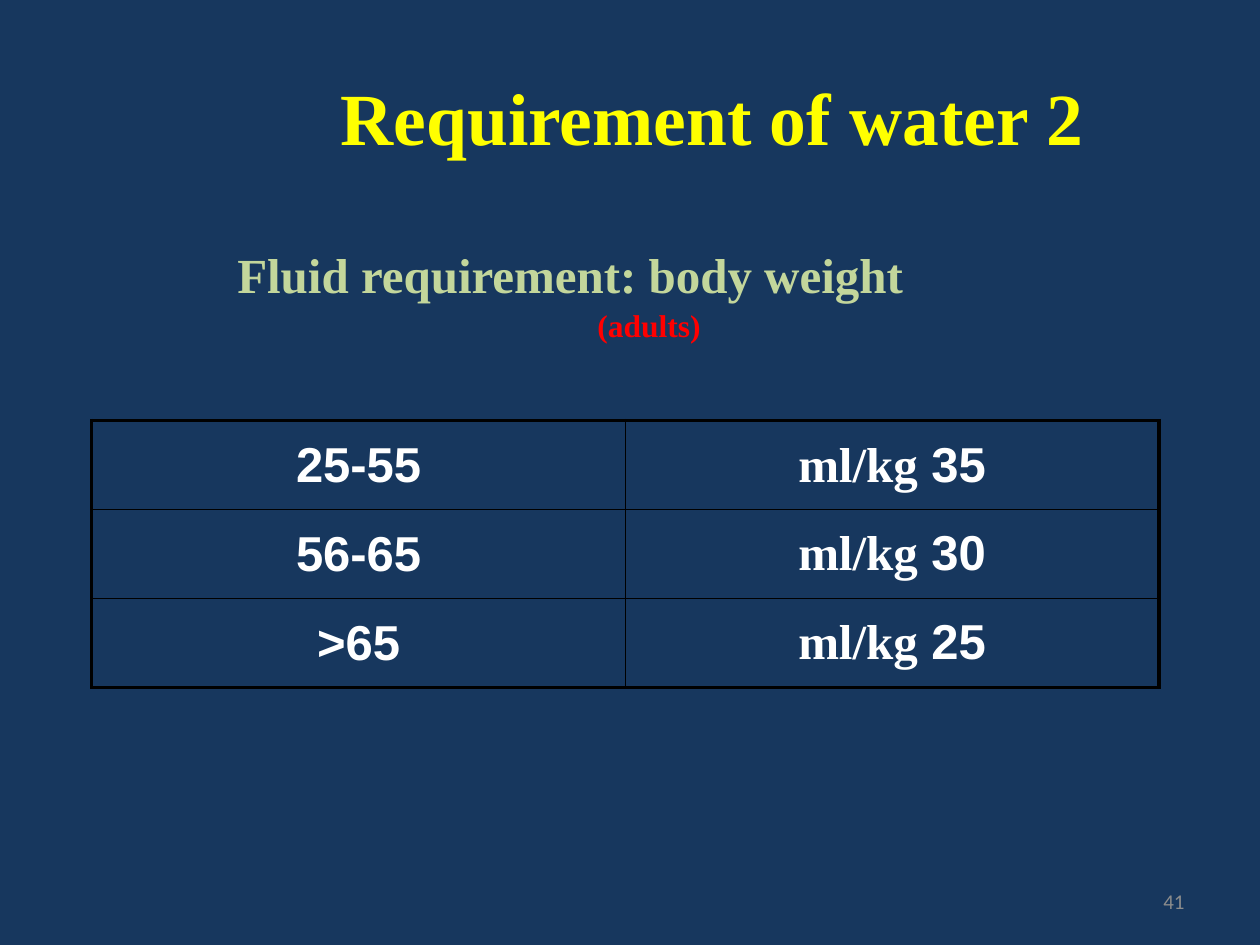
from dataclasses import dataclass

from lxml import etree
from pptx import Presentation
from pptx import util as u
from pptx.dml.color import RGBColor
from pptx.enum import text
from pptx.oxml import ns

COLORS = {
    "navy": "17375E", "yellow": "FFFF00", "sage": "C3D69B", "red": "FF0000",
    "white": "FFFFFF", "black": "000000", "grey": "8C8C8C",
}
SERIF = "Times New Roman"
OUTER, INNER = u.Pt(2.25), u.Pt(1)


@dataclass
class Style:
    size: float
    color: str
    font: str = SERIF
    bold: bool = True


@dataclass
class Place:
    left: float
    top: float
    width: float
    height: float

    def lengths(self) -> list:
        return [u.Cm(n) for n in (self.left, self.top, self.width, self.height)]


@dataclass
class Need:
    age: str
    fluid: str


TITLE = Place(4.57, 0.76, 19.56, 3.18)
BODY = Place(2.29, 4.93, 21.59, 2.9)
TABLE = Place(1.85, 8.48, 21.51, 5.38)
NUMBER = Place(18.21, 17.65, 5.92, 1.02)
CELL = Style(28, "white")
NEEDS = [Need("25-55", "35 ml/kg"), Need("56-65", "30 ml/kg"), Need("65<", "25 ml/kg")]


def rgb(name: str) -> RGBColor:
    return RGBColor.from_string(COLORS[name])


def format_runs(para, style: Style, align) -> None:
    para.alignment = align
    for span in para.runs:
        span.font.name = style.font
        span.font.size = u.Pt(style.size)
        span.font.bold = style.bold
        span.font.color.rgb = rgb(style.color)


def move(box, place: Place) -> None:
    box.left, box.top, box.width, box.height = place.lengths()


def remove_bullet(para, indent: float) -> None:
    props = para._p.get_or_add_pPr()
    props.set("marL", str(u.Cm(indent)))
    props.set("indent", "0")
    etree.SubElement(props, ns.qn("a:buNone"))


def set_right_to_left(para) -> None:
    """Order the paragraph right to left, with a complex-script font."""
    para._p.get_or_add_pPr().set("rtl", "1")
    for span in para.runs:
        script = etree.SubElement(span._r.get_or_add_rPr(), ns.qn("a:cs"))
        script.set("typeface", "Arial")


def add_border(cell, side: str, width: int) -> None:
    line = etree.SubElement(cell._tc.get_or_add_tcPr(), ns.qn(f"a:ln{side}"), w=str(width))
    fill = etree.SubElement(line, ns.qn("a:solidFill"))
    etree.SubElement(fill, ns.qn("a:srgbClr"), val=COLORS["black"])


def add_title(page) -> None:
    box = page.shapes.title
    move(box, TITLE)
    box.text_frame.text = "Requirement of water 2"
    box.text_frame.vertical_anchor = text.MSO_ANCHOR.MIDDLE
    format_runs(box.text_frame.paragraphs[0], Style(42, "yellow"), text.PP_ALIGN.CENTER)


def add_body(page) -> None:
    box = page.placeholders[1]
    move(box, BODY)
    frame = box.text_frame
    frame.text = "Fluid requirement: body weight\n(adults)"
    frame.auto_size = text.MSO_AUTO_SIZE.NONE
    heading, group = frame.paragraphs
    remove_bullet(heading, 2.24)
    remove_bullet(group, 0)
    format_runs(heading, Style(28, "sage"), text.PP_ALIGN.LEFT)
    format_runs(group, Style(18, "red"), text.PP_ALIGN.CENTER)
    heading.space_before, group.space_before = u.Pt(0), u.Pt(3.6)
    heading.line_spacing = group.line_spacing = 0.9


def add_needs(page) -> None:
    table = page.shapes.add_table(len(NEEDS), 2, *TABLE.lengths()).table
    table.first_row = table.horz_banding = False
    last = len(NEEDS) - 1
    for r, need in enumerate(NEEDS):
        for c, words in enumerate((need.age, need.fluid)):
            cell = table.cell(r, c)
            cell.text_frame.text = words
            cell.vertical_anchor = text.MSO_ANCHOR.MIDDLE
            para = cell.text_frame.paragraphs[0]
            format_runs(para, CELL, text.PP_ALIGN.CENTER)
            set_right_to_left(para)
            edges = {"L": c == 0, "R": c == 1, "T": r == 0, "B": r == last}
            for side, outside in edges.items():
                add_border(cell, side, OUTER if outside else INNER)
            cell.fill.background()


def add_number(page) -> None:
    frame = page.shapes.add_textbox(*NUMBER.lengths()).text_frame
    frame.word_wrap = True
    frame.vertical_anchor = text.MSO_ANCHOR.MIDDLE
    frame.text = "41"
    format_runs(frame.paragraphs[0], Style(12, "grey", "Calibri", False), text.PP_ALIGN.RIGHT)


def main() -> None:
    deck = Presentation()
    deck.slide_width, deck.slide_height = u.Cm(25.4), u.Cm(19.05)
    page = deck.slides.add_slide(deck.slide_layouts[1])
    page.background.fill.solid()
    page.background.fill.fore_color.rgb = rgb("navy")
    add_title(page)
    add_body(page)
    add_needs(page)
    add_number(page)
    deck.save("out.pptx")


if __name__ == "__main__":
    main()
